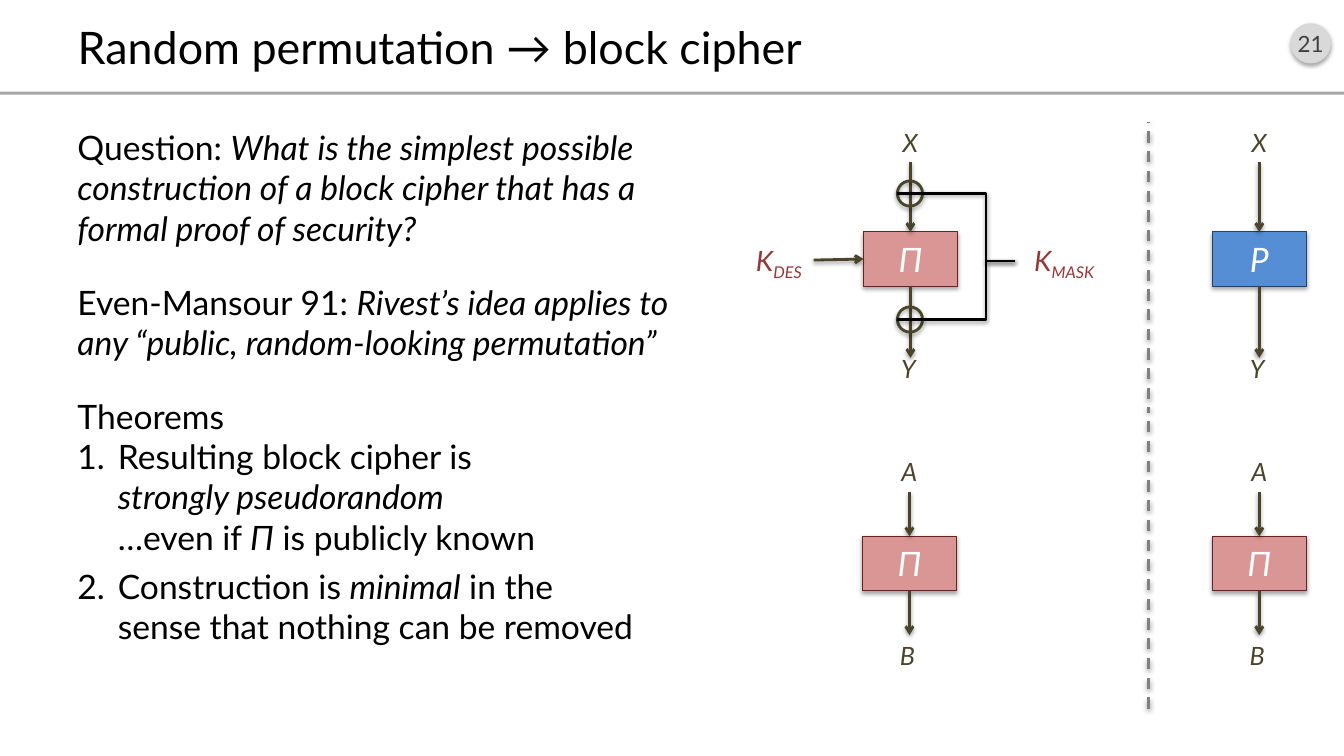
from lxml.etree import SubElement
from pptx import Presentation
from pptx.dml.color import RGBColor
from pptx.enum.dml import MSO_LINE
from pptx.enum.shapes import MSO_CONNECTOR, MSO_SHAPE
from pptx.enum.text import MSO_ANCHOR, MSO_AUTO_SIZE, PP_ALIGN
from pptx.oxml.ns import qn
from pptx.util import Inches, Pt

FONT = "Lato"
COLORS = {
    "black": "000000", "white": "FFFFFF", "badge": "D9D9D9", "number": "404040",
    "rule": "A6A6A6", "divider": "808080", "ink": "4A452A", "key": "953735",
    "pink": "D99694", "pink_edge": "632523", "blue": "558ED5", "blue_edge": "254061",
}

TITLE = [("Random permutation ", ""), ("→", "i"), (" block cipher", "")]
BODY = [
    dict(runs=[("Question: ", ""), ("What is the simplest possible construction of a "
               "block cipher that has a formal proof of security?", "i")]),
    dict(before=24, runs=[("Even-Mansour 91: ", ""), ("Rivest’s idea applies to any "
         "“public, random-looking permutation”", "i")]),
    dict(before=24, runs=[("Theorems", "")]),
    dict(number=1, runs=[("Resulting block cipher is\n", ""),
                         ("strongly pseudorandom", "i")]),
    dict(indent=True, runs=[("…even if ", ""), ("Π", "i"), (" is publicly known", "")]),
    dict(number=2, before=6, runs=[("Construction is ", ""), ("minimal", "i"),
         (" in the\nsense that nothing can be removed", "")]),
]

UPPER = dict(label=1.21, start=1.61, box=2.3, end=3.55, out=3.46)
LOWER = dict(label=4.48, start=4.88, box=5.32, end=6.3, out=6.3)
STACKS = [
    (9.03, UPPER, "X", "Π", "Y", "pink"),
    (12.49, UPPER, "X", "P", "Y", "blue"),
    (9.02, LOWER, "A", "Π", "B", "pink"),
    (12.49, LOWER, "A", "Π", "B", "pink"),
]
KEYS = [("DES", 7.37, 0.71), ("MASK", 10.07, 0.97)]
DIVIDERS = [(3.96, 1.21), (7.03, 4.04)]
BOX_W, BOX_H, RING = 0.93, 0.54, 0.25
XOR_Y = [1.92, 3.17]
MASK_X, MASK_Y, XOR_LEFT, BEND_X = 10.07, 2.59, 8.9, 9.78

prs = Presentation()
prs.slide_width, prs.slide_height = Inches(13.33), Inches(7.5)
slide = prs.slides.add_slide(prs.slide_layouts[5])
shapes = slide.shapes


def rgb(name):
    return RGBColor.from_string(COLORS[name])


def write(tf, paras, size=18, color="black", align=PP_ALIGN.LEFT, anchor=MSO_ANCHOR.TOP):
    tf.word_wrap = True
    tf.auto_size = MSO_AUTO_SIZE.NONE
    tf.vertical_anchor = anchor
    for i, para in enumerate(paras):
        p = tf.add_paragraph() if i else tf.paragraphs[0]
        p.alignment = align
        p.space_before = Pt(para.get("before", 0))
        pPr = p._p.get_or_add_pPr()
        number = para.get("number")
        if number or para.get("indent"):
            pPr.set("marL", str(Inches(0.4)))
            pPr.set("indent", str(Inches(-0.4) if number else 0))
        if number:
            bullet = SubElement(pPr, qn("a:buAutoNum"), type="arabicPeriod")
            bullet.set("startAt", str(number))
        for text, style in para["runs"]:
            for j, part in enumerate(text.split("\n")):
                if j:
                    p.add_line_break()
                if not part:
                    continue
                r = p.add_run()
                r.text = part
                r.font.name, r.font.size = FONT, Pt(size)
                r.font.italic = "i" in style
                r.font.color.rgb = rgb(color)
                if "sub" in style:
                    r.font._element.set("baseline", "-25000")


def add_text(x, y, w, h, paras, **fmt):
    tb = shapes.add_textbox(Inches(x), Inches(y), Inches(w), Inches(h))
    write(tb.text_frame, paras, **fmt)


def add_label(cx, y, text):
    add_text(cx - 0.7, y, 1.4, 0.4, [dict(runs=[(text, "i")])],
             color="ink", align=PP_ALIGN.CENTER)


def add_shadow(sp, alpha, dist):
    effects = SubElement(sp._element.spPr, qn("a:effectLst"))
    shadow = SubElement(effects, qn("a:outerShdw"), blurRad="40000", dist=str(dist),
                        dir="5400000", rotWithShape="0")
    clr = SubElement(shadow, qn("a:srgbClr"), val=COLORS["black"])
    SubElement(clr, qn("a:alpha"), val=str(alpha * 1000))


def add_shape(kind, x, y, w, h, fill=None, edge=None, weight=0.75, shadow=True):
    sp = shapes.add_shape(kind, Inches(x), Inches(y), Inches(w), Inches(h))
    if fill:
        sp.fill.solid()
        sp.fill.fore_color.rgb = rgb(fill)
    else:
        sp.fill.background()
    if edge:
        sp.line.color.rgb = rgb(edge)
        sp.line.width = Pt(weight)
    else:
        sp.line.fill.background()
    if shadow:
        add_shadow(sp, 35, 23000)
    else:
        sp.shadow.inherit = False
    return sp


def add_line(x1, y1, x2, y2, color="ink", kind=MSO_CONNECTOR.STRAIGHT, arrow=False, dash=None):
    cn = shapes.add_connector(kind, Inches(x1), Inches(y1), Inches(x2), Inches(y2))
    cn.line.color.rgb = rgb(color)
    cn.line.width = Pt(2)
    if dash:
        cn.line.dash_style = dash
    if arrow:
        SubElement(cn.line._get_or_add_ln(), qn("a:tailEnd"), type="arrow")
    add_shadow(cn, 38, 20000)
    return cn


def add_stack(cx, rows, top, name, bottom, fill):
    box = add_shape(MSO_SHAPE.RECTANGLE, cx - BOX_W / 2, rows["box"], BOX_W, BOX_H,
                    fill, fill + "_edge")
    write(box.text_frame, [dict(runs=[(name, "i")])], size=24, color="white",
          align=PP_ALIGN.CENTER, anchor=MSO_ANCHOR.MIDDLE)
    into = add_line(cx, rows["start"], cx, rows["box"], arrow=True)
    into.end_connect(box, 0)
    out = add_line(cx, rows["box"] + BOX_H, cx, rows["end"], arrow=True)
    out.begin_connect(box, 2)
    add_label(cx, rows["label"], top)
    add_label(cx - 0.02, rows["out"], bottom)
    return box


badge = add_shape(MSO_SHAPE.OVAL, 12.8, 0.23, 0.4, 0.4, "badge")
badge.text_frame.margin_left = badge.text_frame.margin_right = 0
write(badge.text_frame, [dict(runs=[("21", "")])], size=16, color="number",
      align=PP_ALIGN.CENTER, anchor=MSO_ANCHOR.MIDDLE)
add_shape(MSO_SHAPE.RECTANGLE, 0, 0.91, 13.33, 0.03, "rule", shadow=False)

title = shapes.title
title.left, title.top = Inches(0.67), Inches(0.16)
title.width, title.height = Inches(12), Inches(0.6)
write(title.text_frame, [dict(runs=TITLE)], size=32, anchor=MSO_ANCHOR.MIDDLE)
add_text(0.67, 1.21, 6.22, 5.75, BODY, size=24)

boxes = [add_stack(*stack) for stack in STACKS]
key_arrow = add_line(8.07, 2.58, 8.57, 2.58, arrow=True)
key_arrow.end_connect(boxes[0], 1)
for sub, x, w in KEYS:
    add_text(x, 2.37, w, 0.44, [dict(runs=[("K", "i"), (sub, "i sub")])],
             size=20, color="key", align=PP_ALIGN.CENTER)

for y in XOR_Y:
    add_shape(MSO_SHAPE.OVAL, XOR_LEFT, y - RING / 2, RING, RING, edge="ink", weight=2)
    wire = add_line(MASK_X, MASK_Y, XOR_LEFT, y, "black", MSO_CONNECTOR.ELBOW)
    bend = round((MASK_X - BEND_X) / (MASK_X - XOR_LEFT) * 100000)
    guides = wire._element.spPr.find(qn("a:prstGeom")).get_or_add_avLst()
    SubElement(guides, qn("a:gd"), name="adj1", fmla=f"val {bend}")

for y1, y2 in DIVIDERS:
    add_line(11.39, y1, 11.39, y2, "divider", dash=MSO_LINE.DASH)

prs.save("out.pptx")
